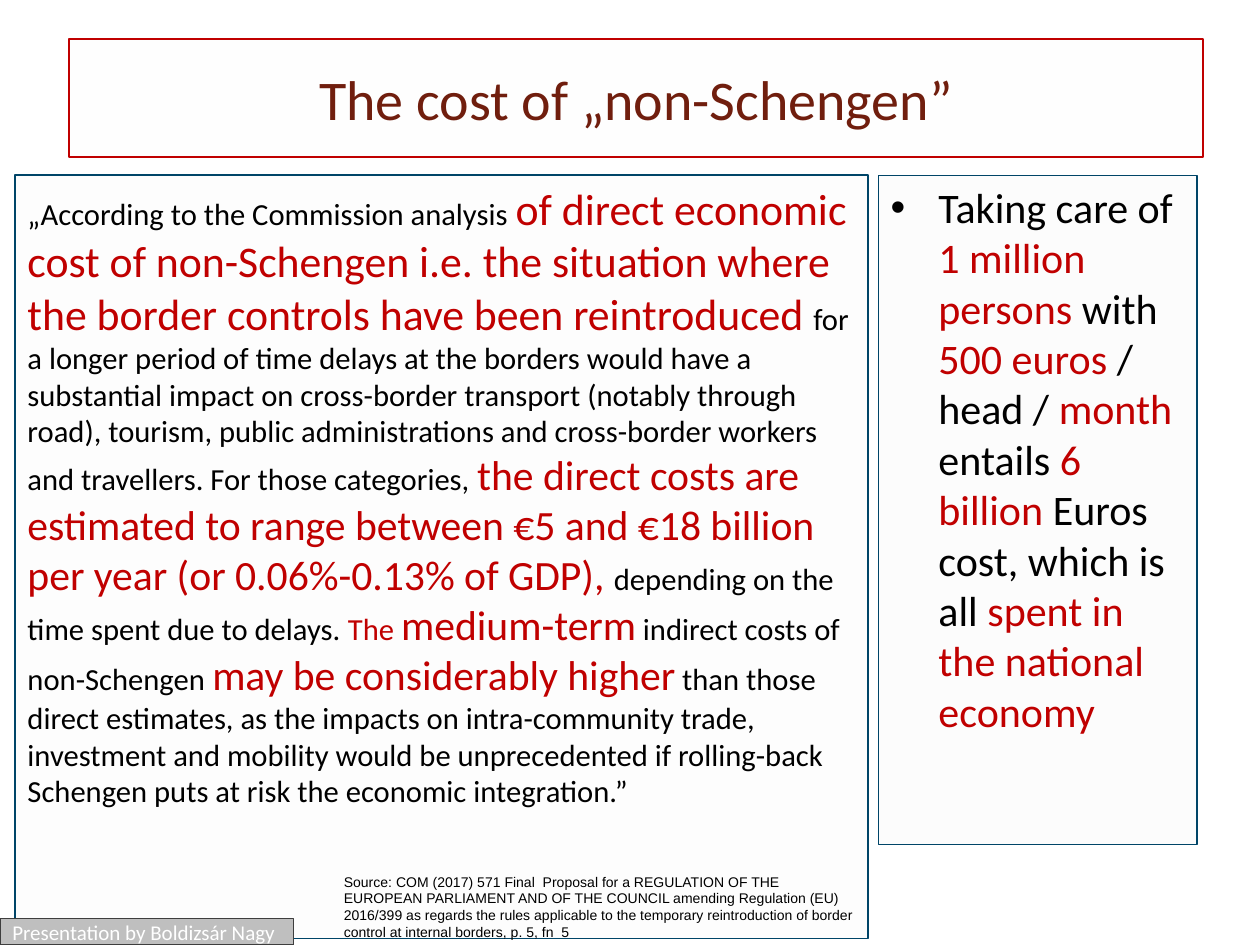
import pptx
import pptx.util
import pptx.dml.color
import pptx.enum.shapes
import pptx.enum.text
import pptx.oxml
import pptx.oxml.ns
import lxml.etree

Inches, Pt = pptx.util.Inches, pptx.util.Pt
RGBColor = pptx.dml.color.RGBColor
ANCHOR = pptx.enum.text.MSO_ANCHOR
ALIGN = pptx.enum.text.PP_ALIGN

BLACK = RGBColor(0x00, 0x00, 0x00)
WHITE = RGBColor(0xFF, 0xFF, 0xFF)
RED = RGBColor(0xC0, 0x00, 0x00)
BROWN = RGBColor(0x70, 0x1E, 0x0E)
NAVY = RGBColor(0x00, 0x45, 0x68)
DARK_GREY = RGBColor(0x3E, 0x3E, 0x3E)
MID_GREY = RGBColor(0xBF, 0xBF, 0xBF)
PALE_GREY = RGBColor(0xF2, 0xF2, 0xF2)

presentation = pptx.Presentation()
presentation.slide_width, presentation.slide_height = Inches(10), Inches(7.5)
slide = presentation.slides.add_slide(presentation.slide_layouts[6])


def add_panel(left, top, width, height, fill, line, line_width, opacity=100):
    """Add a bordered rectangle; opacity is a percentage."""
    panel = slide.shapes.add_shape(
        pptx.enum.shapes.MSO_SHAPE.RECTANGLE,
        Inches(left), Inches(top), Inches(width), Inches(height))
    panel.shadow.inherit = False
    panel.fill.solid()
    panel.fill.fore_color.rgb = fill
    panel.line.color.rgb = line
    panel.line.width = Pt(line_width)
    if opacity < 100:
        color = panel.fill._xPr.find(".//" + pptx.oxml.ns.qn("a:srgbClr"))
        alpha = lxml.etree.SubElement(color, pptx.oxml.ns.qn("a:alpha"))
        alpha.set("val", str(opacity * 1000))
    return panel


def write_text(shape, runs, font="Calibri", anchor=ANCHOR.TOP, align=ALIGN.LEFT):
    """Fill the shape with one paragraph of (text, size, colour) runs."""
    shape.text_frame.word_wrap = True
    shape.text_frame.vertical_anchor = anchor
    paragraph = shape.text_frame.paragraphs[0]
    paragraph.alignment = align
    for text, size, color in runs:
        run = paragraph.add_run()
        run.text = text
        for name, value in {"name": font, "size": Pt(size)}.items():
            setattr(run.font, name, value)
        run.font.color.rgb = color
    return paragraph


title = add_panel(0.55, 0.31, 9, 0.94, PALE_GREY, RED, 1.25, opacity=3)
write_text(title, [("The cost of „non-Schengen”", 32, BROWN)],
           anchor=ANCHOR.MIDDLE, align=ALIGN.CENTER)

quotation = add_panel(0.12, 1.39, 6.77, 6.06, PALE_GREY, NAVY, 0.75, opacity=8)
quotation_paragraph = write_text(quotation, [
    ("„According to the Commission analysis ", 17.5, BLACK),
    ("of direct economic cost of non-Schengen i.e. the situation where the "
     "border controls have been reintroduced ", 25, RED),
    ("for a longer period of time delays at the borders would have a substantial "
     "impact on cross-border transport (notably through road), tourism, public "
     "administrations and cross-border workers and travellers. For those "
     "categories, ", 17.5, BLACK),
    ("the direct costs are estimated to range between €5 and €18 billion per "
     "year (or 0.06%-0.13% of GDP), ", 23.8, RED),
    ("depending on the time spent due to delays. ", 17.5, BLACK),
    ("The ", 17.5, RED),
    ("medium-term", 23.8, RED),
    (" indirect costs of non-Schengen ", 17.5, BLACK),
    ("may be considerably higher", 23.8, RED),
    (" than those direct estimates, as the impacts on intra-community trade, "
     "investment and mobility would be unprecedented if rolling-back Schengen "
     "puts at risk the economic integration.”", 17.5, BLACK),
])

comparison = add_panel(6.97, 1.39, 2.53, 5.31, PALE_GREY, NAVY, 0.75, opacity=19)
comparison_parts = [
    "Taking care of ", "1 million persons ", "with ", "500 euros ", "/ head / ",
    "month", " entails ", "6 billion", " Euros cost, which is all ",
    "spent in the national economy",
]
comparison_paragraph = write_text(comparison, [
    (text, 24, (BLACK, RED)[index % 2]) for index, text in enumerate(comparison_parts)])

for paragraph in (quotation_paragraph, comparison_paragraph):
    paragraph.space_before = Pt(4)

bullet_properties = comparison_paragraph._p.get_or_add_pPr()
bullet_properties.set("marL", str(Inches(0.38)))
bullet_properties.set("indent", str(Inches(-0.38)))
for tag, key, value in (("a:buFont", "typeface", "Arial"), ("a:buChar", "char", "•")):
    lxml.etree.SubElement(bullet_properties, pptx.oxml.ns.qn(tag)).set(key, value)

author = add_panel(0, 7.29, 2.33, 0.21, MID_GREY, DARK_GREY, 0.75)
write_text(author, [("Presentation by Boldizsár Nagy", 12, WHITE)], anchor=ANCHOR.MIDDLE)

source = slide.shapes.add_textbox(Inches(2.63), Inches(6.88), Inches(4.25), Inches(1.04))
write_text(source, [
    ("Source: COM (2017) 571 Final  Proposal for a REGULATION OF THE EUROPEAN "
     "PARLIAMENT AND OF THE COUNCIL amending Regulation (EU) 2016/399 as regards "
     "the rules applicable to the temporary reintroduction of border control at "
     "internal borders, p. 5, fn  5", 8, BLACK)], font="Arial")

presentation.save("out.pptx")
